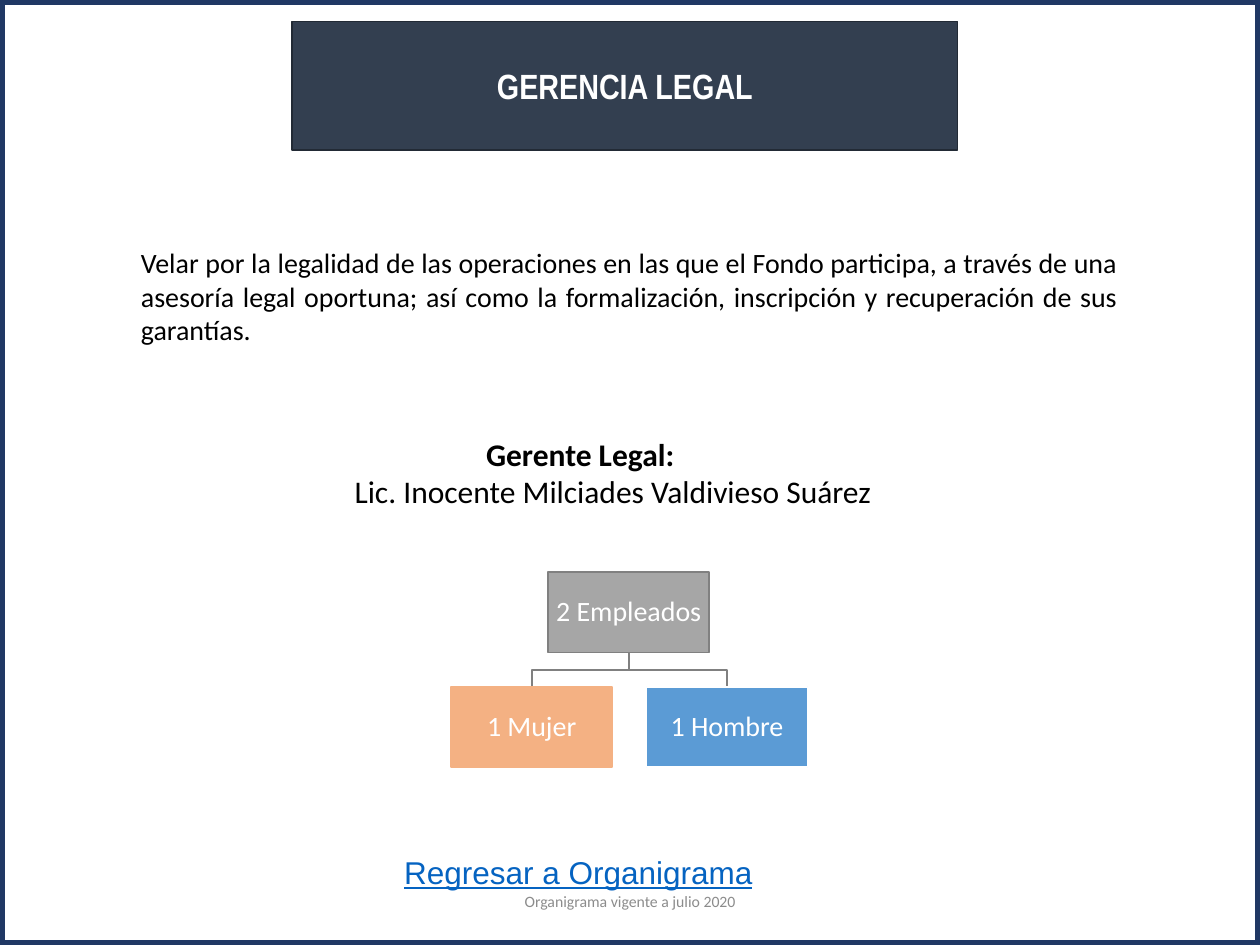
from pptx import Presentation
from pptx import util as u
from pptx.dml.color import RGBColor
from pptx.enum import shapes, text

NAVY = RGBColor(0x20, 0x38, 0x64)
SLATE = RGBColor(0x33, 0x3F, 0x50)
DARK_SLATE = RGBColor(0x22, 0x2A, 0x35)
BLACK = RGBColor(0, 0, 0)
WHITE = RGBColor(0xFF, 0xFF, 0xFF)
LINK_BLUE = RGBColor(0x05, 0x63, 0xC1)
FOOTER_GRAY = RGBColor(0x8C, 0x8C, 0x8C)
LINE_GRAY = RGBColor(0x80, 0x80, 0x80)
GRAY = RGBColor(0xA6, 0xA6, 0xA6)
ORANGE = RGBColor(0xF4, 0xB1, 0x83)
BLUE = RGBColor(0x5B, 0x9B, 0xD5)

CENTER = text.PP_ALIGN.CENTER
NODE_WIDTH, NODE_HEIGHT = 1.28, 0.64
ROOT_LEFT, ROOT_TOP = 4.35, 4.54
CHILD_TOP = 5.45


def add_span(para, wording, size, color, font="Calibri", bold=False, underline=False):
    span = para.add_run()
    span.text = wording
    span.font.name = font
    span.font.size = u.Pt(size)
    span.font.bold = bold
    span.font.underline = underline
    span.font.color.rgb = color


def add_rectangle(page, left, top, width, height, fill, line, weight=1):
    box = page.shapes.add_shape(
        shapes.MSO_SHAPE.RECTANGLE,
        u.Inches(left), u.Inches(top), u.Inches(width), u.Inches(height))
    box.shadow.inherit = False
    if fill is None:
        box.fill.background()
    else:
        box.fill.solid()
        box.fill.fore_color.rgb = fill
    box.line.color.rgb = line
    box.line.width = u.Pt(weight)
    frame = box.text_frame
    frame.word_wrap = True
    frame.vertical_anchor = text.MSO_ANCHOR.MIDDLE
    frame.paragraphs[0].alignment = CENTER
    return box


def add_text_box(page, left, top, width, height, align=None):
    """Add a wrapping text box and return its text frame."""
    box = page.shapes.add_textbox(
        u.Inches(left), u.Inches(top), u.Inches(width), u.Inches(height))
    frame = box.text_frame
    frame.word_wrap = True
    frame.paragraphs[0].alignment = align
    return frame


def add_node(page, left, top, wording, fill, line):
    box = add_rectangle(page, left, top, NODE_WIDTH, NODE_HEIGHT, fill, line)
    frame = box.text_frame
    frame.margin_left = frame.margin_right = u.Inches(0.01)
    frame.margin_top = frame.margin_bottom = u.Inches(0.01)
    para = frame.paragraphs[0]
    para.line_spacing = 0.9
    add_span(para, wording, 16, WHITE)


def add_branch(page, child_left):
    """Draw the bent line from the root node down to a child node."""
    start_x = ROOT_LEFT + NODE_WIDTH / 2
    end_x = child_left + NODE_WIDTH / 2
    start_y = ROOT_TOP + NODE_HEIGHT
    middle_y = (start_y + CHILD_TOP) / 2
    corners = [(start_x, middle_y), (end_x, middle_y), (end_x, CHILD_TOP)]
    builder = page.shapes.build_freeform(u.Inches(start_x), u.Inches(start_y))
    builder.add_line_segments(
        [(u.Inches(x), u.Inches(y)) for x, y in corners], close=False)
    branch = builder.convert_to_shape()
    branch.shadow.inherit = False
    branch.fill.background()
    branch.line.color.rgb = LINE_GRAY
    branch.line.width = u.Pt(1)


def add_staff_chart(page):
    children = [
        (3.58, "1 Mujer", ORANGE, ORANGE),
        (5.13, "1 Hombre", BLUE, WHITE),
    ]
    for left, *_ in children:
        add_branch(page, left)
    add_node(page, ROOT_LEFT, ROOT_TOP, "2 Empleados", GRAY, LINE_GRAY)
    for left, wording, fill, line in children:
        add_node(page, left, CHILD_TOP, wording, fill, line)


def add_manager(page):
    """Name the manager; the indent sets the name right of its heading."""
    frame = add_text_box(page, 2, 3.4, 5.21, 0.71, CENTER)
    add_span(frame.paragraphs[0], "Gerente Legal:", 18, BLACK, bold=True)
    para = frame.add_paragraph()
    para.alignment = CENTER
    para._p.get_or_add_pPr().set("marL", str(u.Inches(0.52)))
    add_span(para, "Lic. Inocente Milciades Valdivieso Suárez", 18, BLACK)


def main():
    deck = Presentation()
    deck.slide_width, deck.slide_height = u.Inches(10), u.Inches(7.5)
    page = deck.slides.add_slide(deck.slide_layouts[6])

    add_rectangle(page, 0, 0, 10, 7.5, None, NAVY, 6)

    back = add_text_box(page, 3.11, 6.72, 3.27, 0.4)
    add_span(back.paragraphs[0], "Regresar a Organigrama", 18, LINK_BLUE,
             font="Arial", underline=True)

    title = add_rectangle(page, 2.32, 0.17, 5.28, 1.02, SLATE, DARK_SLATE)
    add_span(title.text_frame.paragraphs[0], "GERENCIA LEGAL", 20, WHITE,
             font="Arial Narrow", bold=True)

    add_manager(page)
    add_staff_chart(page)

    purpose = add_text_box(page, 1.02, 1.9, 7.95, 0.91, text.PP_ALIGN.JUSTIFY)
    add_span(purpose.paragraphs[0],
             "Velar por la legalidad de las operaciones en las que el Fondo "
             "participa, a través de una asesoría legal oportuna; así como la "
             "formalización, inscripción y recuperación de sus garantías.",
             16, BLACK)

    footer = add_text_box(page, 3.31, 6.95, 3.38, 0.4, CENTER)
    footer.vertical_anchor = text.MSO_ANCHOR.MIDDLE
    add_span(footer.paragraphs[0], "Organigrama vigente a julio 2020", 9, FOOTER_GRAY)

    deck.save("out.pptx")


if __name__ == "__main__":
    main()
